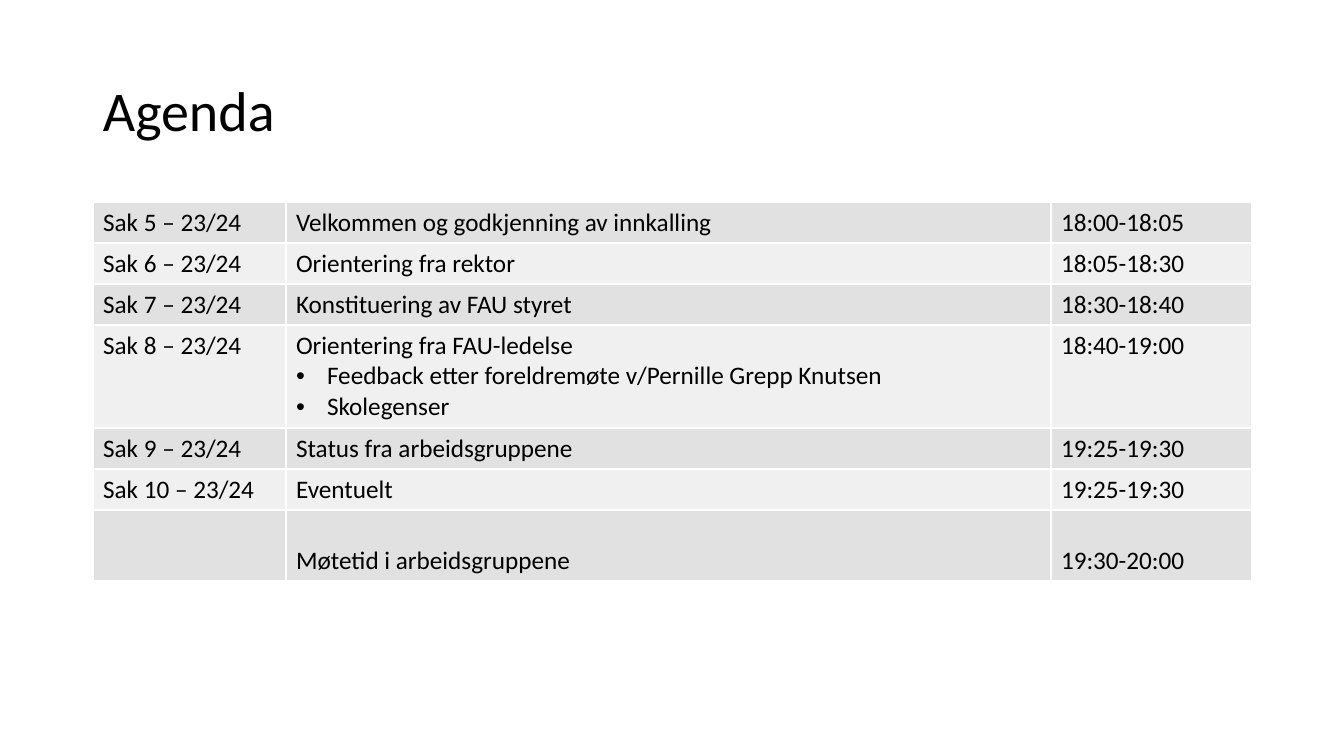
from lxml.etree import SubElement
from pptx import Presentation
from pptx.dml.color import RGBColor
from pptx.enum.text import MSO_ANCHOR as Anchor
from pptx.oxml.ns import qn
from pptx.util import Emu, Pt

# Content: case, topic lines (the first plain, the rest bulleted), time
TITLE = "Agenda"
AGENDA = [
    ("Sak 5 – 23/24", ["Velkommen og godkjenning av innkalling"], "18:00-18:05"),
    ("Sak 6 – 23/24", ["Orientering fra rektor"], "18:05-18:30"),
    ("Sak 7 – 23/24", ["Konstituering av FAU styret"], "18:30-18:40"),
    ("Sak 8 – 23/24", ["Orientering fra FAU-ledelse",
                       "Feedback etter foreldremøte v/Pernille Grepp Knutsen",
                       "Skolegenser"], "18:40-19:00"),
    ("Sak 9 – 23/24", ["Status fra arbeidsgruppene"], "19:25-19:30"),
    ("Sak 10 – 23/24", ["Eventuelt"], "19:25-19:30"),
    ("", ["Møtetid i arbeidsgruppene"], "19:30-20:00"),
]

# Layout in px, 100.8 px to the inch
LEFT, WIDTH = 93, 1159
TITLE_TOP, TITLE_HEIGHT = 40, 146
TABLE_TOP = 202
COLUMN_WIDTHS = [193, 765, 201]
ROW_PADDING, LINE_HEIGHT = 10, 31
CLOSING_HEIGHT = 71
BULLET_INDENT = 31

FONT = "Calibri"
BLACK = RGBColor(0x00, 0x00, 0x00)
WHITE = RGBColor(0xFF, 0xFF, 0xFF)
BANDS = [RGBColor(0xE1, 0xE1, 0xE1), RGBColor(0xF0, 0xF0, 0xF0)]


def px(length):
    return Emu(round(length * 914400 / 100.8))


def add_text(paragraph, text, size):
    run = paragraph.add_run()
    run.text = text
    run.font.name = FONT
    run.font.size = Pt(size)
    run.font.color.rgb = BLACK


def add_bullet(paragraph):
    properties = paragraph._p.get_or_add_pPr()
    properties.set("marL", str(px(BULLET_INDENT)))
    properties.set("indent", str(-px(BULLET_INDENT)))
    SubElement(properties, qn("a:buFont")).set("typeface", "Arial")
    SubElement(properties, qn("a:buChar")).set("char", "•")


def add_borders(cell):
    properties = cell._tc.get_or_add_tcPr()
    for position, side in enumerate(("a:lnL", "a:lnR", "a:lnT", "a:lnB")):
        border = SubElement(properties, qn(side), w=str(Pt(1)))
        properties.insert(position, border)
        fill = SubElement(border, qn("a:solidFill"))
        SubElement(fill, qn("a:srgbClr")).set("val", str(WHITE))


def fill_cell(cell, lines, band):
    cell.fill.solid()
    cell.fill.fore_color.rgb = band
    add_borders(cell)
    for number, line in enumerate(lines):
        frame = cell.text_frame
        paragraph = frame.add_paragraph() if number else frame.paragraphs[0]
        if number:
            add_bullet(paragraph)
        if line:
            add_text(paragraph, line, 18)


presentation = Presentation()
presentation.slide_width = px(1344)
presentation.slide_height = px(756)
slide = presentation.slides.add_slide(presentation.slide_layouts[6])

# Title
heading = slide.shapes.add_textbox(
    px(LEFT), px(TITLE_TOP), px(WIDTH), px(TITLE_HEIGHT)).text_frame
heading.word_wrap = True
heading.vertical_anchor = Anchor.MIDDLE
heading.paragraphs[0].line_spacing = 0.9
add_text(heading.paragraphs[0], TITLE, 40)

# Agenda table
heights = [ROW_PADDING + LINE_HEIGHT * len(topic) for _, topic, _ in AGENDA]
heights[-1] = CLOSING_HEIGHT
table = slide.shapes.add_table(
    len(AGENDA), len(COLUMN_WIDTHS),
    px(LEFT), px(TABLE_TOP), px(WIDTH), px(sum(heights))).table
table.first_row = False
for column, width in zip(table.columns, COLUMN_WIDTHS):
    column.width = px(width)

for index, (case, topic, time) in enumerate(AGENDA):
    table.rows[index].height = px(heights[index])
    for column, lines in enumerate(([case], topic, [time])):
        fill_cell(table.cell(index, column), lines, BANDS[index % 2])

# The closing row sits at the bottom of its taller cells
for cell in table.rows[len(AGENDA) - 1].cells:
    cell.vertical_anchor = Anchor.BOTTOM

presentation.save("out.pptx")
